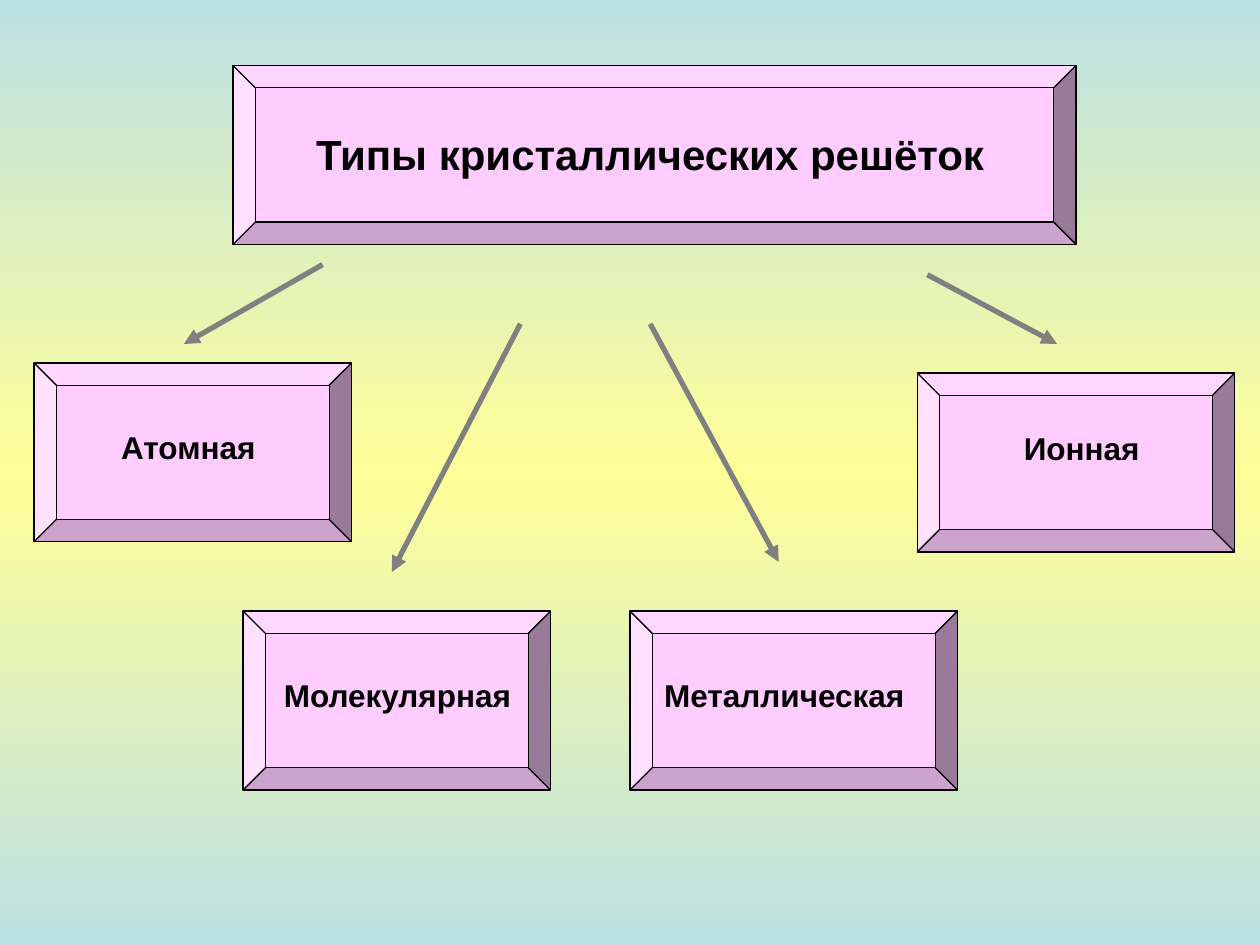
from copy import deepcopy
from lxml import etree
from pptx import Presentation
from pptx.dml.color import RGBColor
from pptx.enum.shapes import MSO_CONNECTOR, MSO_SHAPE
from pptx.enum.text import MSO_ANCHOR, MSO_AUTO_SIZE, PP_ALIGN
from pptx.oxml.ns import qn
from pptx.util import Inches, Pt

RECT, BEVEL = MSO_SHAPE.RECTANGLE, MSO_SHAPE.BEVEL
LINE = MSO_CONNECTOR.STRAIGHT
TOP, MID = MSO_ANCHOR.TOP, PP_ALIGN.CENTER
GROW = MSO_AUTO_SIZE.SHAPE_TO_FIT_TEXT

deck = Presentation()
deck.slide_width, deck.slide_height = Inches(10), Inches(7.5)
CELL = deck.slide_width / 100
slide = deck.slides.add_slide(deck.slide_layouts[5])
shapes = slide.shapes


def grid(*cells):
    return [round(n * CELL) for n in cells]


def tint(color, code):
    color.rgb = RGBColor.from_string(code)


back = shapes.add_shape(RECT, *grid(0, 0, 100, 75))
back.shadow.inherit = False
back.line.fill.background()
back.fill.gradient()
back.fill.gradient_angle = 270
stops = back.element.find(".//" + qn("a:gsLst"))
stops.insert(1, deepcopy(stops[0]))
for stop, (spot, code) in zip(
    back.fill.gradient_stops, [(0, "BBE0E3"), (0.5, "FFFF99"), (1, "BBE0E3")]
):
    stop.position = spot
    tint(stop.color, code)

frames = [
    (18.5, 5.2, 66.9),
    (2.7, 28.8, 25.2),
    (19.3, 48.5, 24.4),
    (50, 48.5, 26),
    (72.8, 29.6, 25.2),
]
for left, top, width in frames:
    frame = shapes.add_shape(BEVEL, *grid(left, top, width, 14.2))
    frame.adjustments[0] = 0.125
    frame.shadow.inherit = False
    frame.fill.solid()
    tint(frame.fill.fore_color, "FFCCFF")
    tint(frame.line.color, "000000")
    frame.line.width = Pt(0.75)

arrows = [
    (25.6, 21, 14.6, 27.3),
    (41.3, 25.7, 31.1, 45.4),
    (73.6, 21.8, 83.9, 27.3),
    (51.6, 25.7, 61.8, 44.6),
]
for ends in arrows:
    arrow = shapes.add_connector(LINE, *grid(*ends))
    tint(arrow.line.color, "808080")
    arrow.line.width = Pt(3)
    etree.SubElement(arrow.line._get_or_add_ln(), qn("a:tailEnd"), type="triangle")
    etree.SubElement(arrow.element.spPr, qn("a:effectLst"))

title = shapes.title
title.element.getparent().append(title.element)
labels = [
    ("Типы кристаллических решёток", 24, 20.9, 9.7, 61.4, 5),
    ("Атомная", 18, 5.1, 33.5, 19.7, 4),
    ("Ионная", 18, 76, 33.6, 19.7, 4),
    ("Молекулярная", 18, 20.9, 53.2, 21.3, 4),
    ("Металлическая", 18, 51.6, 53.2, 21.3, 4),
]
for text, size, *area in labels:
    box = title if size == 24 else shapes.add_textbox(0, 0, 0, 0)
    box.left, box.top, box.width, box.height = grid(*area)
    body = box.text_frame
    body.text = text
    body.word_wrap = True
    body.auto_size = GROW
    body.vertical_anchor = TOP
    line = body.paragraphs[0]
    line.alignment = MID
    line.font.name = "Arial"
    line.font.size = Pt(size)
    line.font.bold = True
    tint(line.font.color, "000000")

deck.save("out.pptx")
